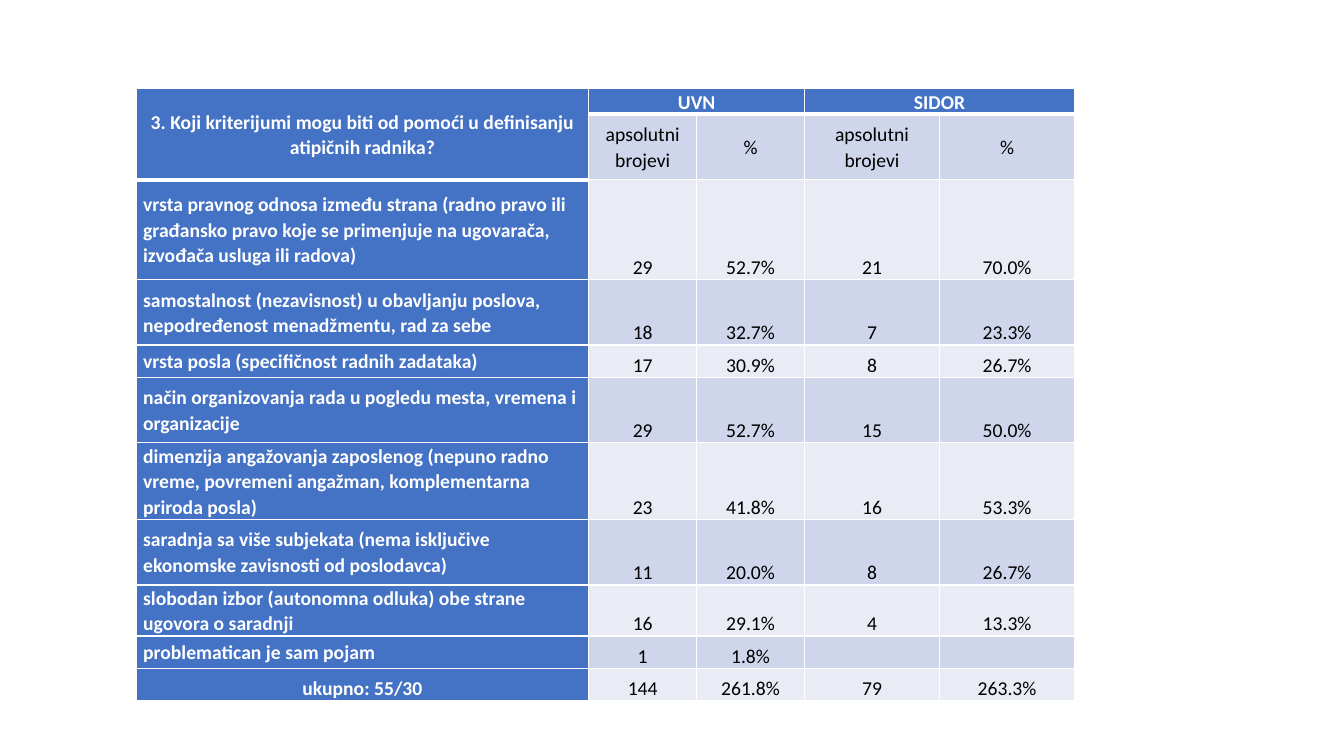
from lxml import etree
from pptx import Presentation, util as u
from pptx.dml.color import RGBColor
from pptx.enum import text
from pptx.oxml.ns import qn

COLORS = {"head": "4472C4", "dark_band": "CFD5EA", "light_band": "E9EBF5",
          "white": "FFFFFF", "black": "000000"}
COLUMN_WIDTHS = [4.49, 1.07, 1.07, 1.34, 1.34]
ROW_HEIGHTS = [0.23, 0.65, 0.99, 0.65, 0.32, 0.65, 0.76, 0.65, 0.5, 0.32, 0.32]
HEADER_ROWS = 2
ROWS = [
    ["3. Koji kriterijumi mogu biti od pomoći u definisanju atipičnih radnika?",
     "UVN", "", "SIDOR", ""],
    ["", "apsolutni brojevi", "%", "apsolutni brojevi", "%"],
    ["vrsta pravnog odnosa između strana (radno pravo ili građansko pravo koje "
     "se primenjuje na ugovarača, izvođača usluga ili radova)",
     "29", "52.7%", "21", "70.0%"],
    ["samostalnost (nezavisnost) u obavljanju poslova, nepodređenost "
     "menadžmentu, rad za sebe", "18", "32.7%", "7", "23.3%"],
    ["vrsta posla (specifičnost radnih zadataka)", "17", "30.9%", "8", "26.7%"],
    ["način organizovanja rada u pogledu mesta, vremena i organizacije",
     "29", "52.7%", "15", "50.0%"],
    ["dimenzija angažovanja zaposlenog (nepuno radno vreme, povremeni angažman, "
     "komplementarna priroda posla)", "23", "41.8%", "16", "53.3%"],
    ["saradnja sa više subjekata (nema isključive ekonomske zavisnosti od "
     "poslodavca)", "11", "20.0%", "8", "26.7%"],
    ["slobodan izbor (autonomna odluka) obe strane ugovora o saradnji",
     "16", "29.1%", "4", "13.3%"],
    ["problematican je sam pojam", "1", "1.8%", "", ""],
    ["ukupno: 55/30", "144", "261.8%", "79", "263.3%"],
]
LAST_ROW = len(ROWS) - 1


class SurveyPage:
    font_name = "Calibri"
    font_size = 14
    line_spacing = 1.07
    side_margin = 0.07

    def __init__(self, deck):
        self.page = deck.slides.add_slide(deck.slide_layouts[6])

    def add_table(self, left, top):
        frame = self.page.shapes.add_table(
            len(ROWS), len(COLUMN_WIDTHS), u.Inches(left), u.Inches(top),
            u.Inches(sum(COLUMN_WIDTHS)), u.Inches(sum(ROW_HEIGHTS)))
        table = frame.table
        for column, width in zip(table.columns, COLUMN_WIDTHS):
            column.width = u.Inches(width)
        for row, height in zip(table.rows, ROW_HEIGHTS):
            row.height = u.Inches(height)
        table.cell(0, 0).merge(table.cell(1, 0))
        for first in (1, 3):
            table.cell(0, first).merge(table.cell(0, first + 1))
        for row, values in enumerate(ROWS):
            for column, value in enumerate(values):
                self.style_cell(table.cell(row, column), row, column)
                if value:
                    self.write_cell(table.cell(row, column), value, row, column)

    def style_cell(self, cell, row, column):
        heavy_row = HEADER_ROWS if column == 0 else 1
        self.add_borders(cell, top=3 if row == heavy_row else 1,
                         bottom=3 if row == 0 or row + 1 == heavy_row else 1)
        band = "light_band" if row % 2 == 0 else "dark_band"
        cell.fill.solid()
        cell.fill.fore_color.rgb = self.color(
            "head" if self.is_heading(row, column) else band)
        cell.margin_left = cell.margin_right = u.Inches(self.side_margin)
        cell.margin_top = cell.margin_bottom = 0
        middle = row < HEADER_ROWS or (column == 0 and row < LAST_ROW)
        cell.vertical_anchor = (text.MSO_ANCHOR.MIDDLE if middle
                                else text.MSO_ANCHOR.BOTTOM)

    def write_cell(self, cell, value, row, column):
        para = cell.text_frame.paragraphs[0]
        para.line_spacing = self.line_spacing
        is_criterion = column == 0 and HEADER_ROWS <= row < LAST_ROW
        para.alignment = text.PP_ALIGN.LEFT if is_criterion else text.PP_ALIGN.CENTER
        heading = self.is_heading(row, column)
        span = para.add_run()
        span.text = value
        span.font.name = self.font_name
        span.font.size = u.Pt(self.font_size)
        span.font.bold = heading
        span.font.color.rgb = self.color("white" if heading else "black")

    @staticmethod
    def add_borders(cell, top, bottom):
        """Draw white cell edges; the widths of top and bottom are in points."""
        properties = cell._tc.get_or_add_tcPr()
        for tag, width in (("lnL", 1), ("lnR", 1), ("lnT", top), ("lnB", bottom)):
            edge = etree.SubElement(properties, qn(f"a:{tag}"), w=str(u.Pt(width)))
            fill = etree.SubElement(edge, qn("a:solidFill"))
            etree.SubElement(fill, qn("a:srgbClr"), val=COLORS["white"])

    @staticmethod
    def is_heading(row, column):
        return row == 0 or column == 0

    @staticmethod
    def color(name):
        return RGBColor.from_string(COLORS[name])


def main():
    deck = Presentation()
    deck.slide_width, deck.slide_height = u.Inches(13.33), u.Inches(7.5)
    SurveyPage(deck).add_table(1.35, 0.88)
    deck.save("out.pptx")


if __name__ == "__main__":
    main()
